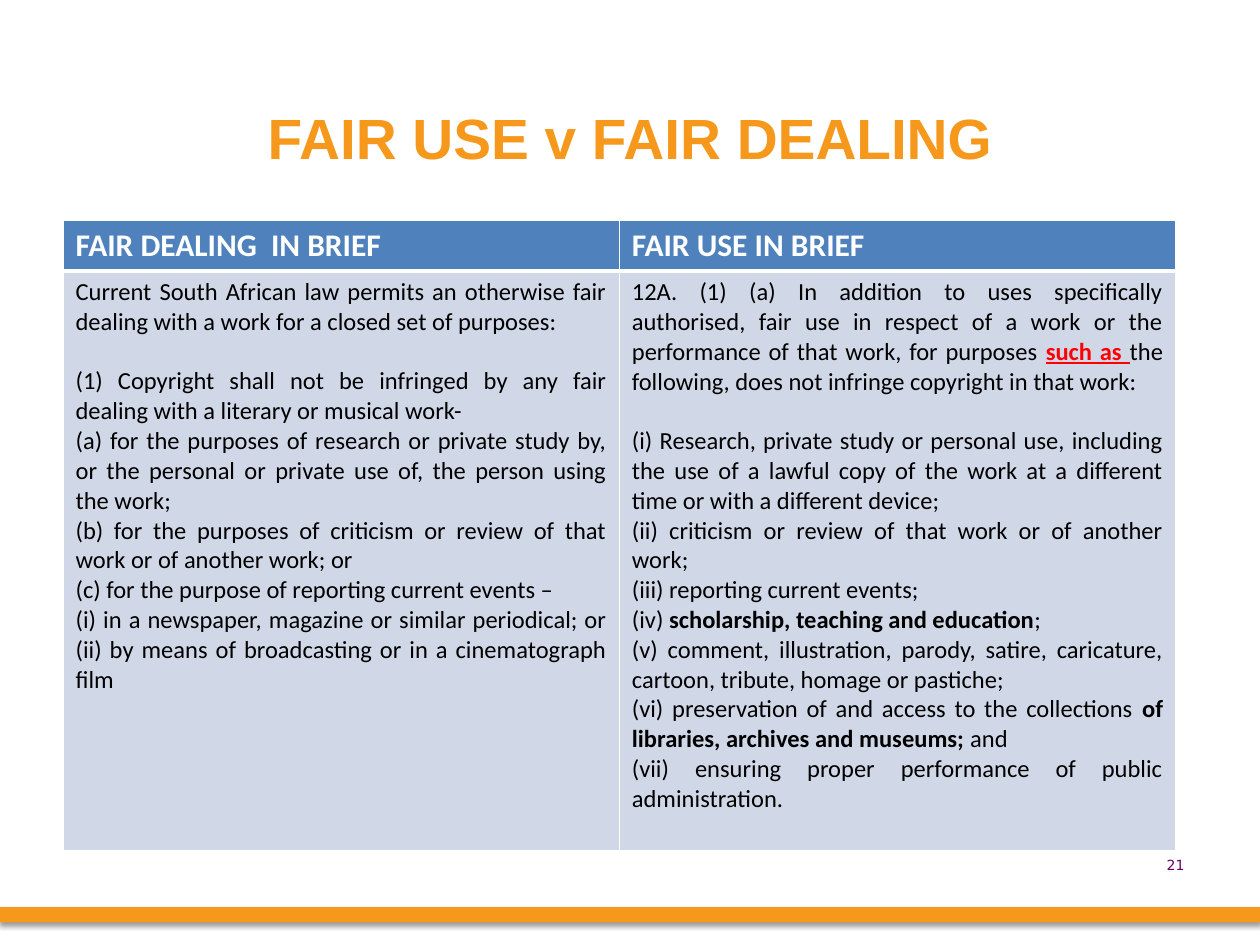
from lxml import etree
from pptx import Presentation, util as u
from pptx.dml.color import RGBColor
from pptx.enum import shapes, text
from pptx.oxml import ns

# Content: a paragraph is a list of (text, style) runs
TITLE = "FAIR USE v FAIR DEALING"
PAGE_NUMBER = "21"
HEADINGS = ["FAIR DEALING  IN BRIEF", "FAIR USE IN BRIEF"]
DEALING = [
    [("Current South African law permits an otherwise fair dealing with a work "
      "for a closed set of purposes:", "plain")],
    [("(1) Copyright shall not be infringed by any fair dealing with a literary "
      "or musical work-", "plain")],
    [("(a) for the purposes of research or private study by, or the personal or "
      "private use of, the person using the work;", "plain")],
    [("(b) for the purposes of criticism or review of that work or of another "
      "work; or", "plain")],
    [("(c) for the purpose of reporting current events –", "plain")],
    [("(i) in a newspaper, magazine or similar periodical; or (ii) by means of "
      "broadcasting or in a cinematograph film", "plain")],
]
USE = [
    [("12A. (1) (a) In addition to uses specifically authorised, fair use in "
      "respect of a work or the performance of that work, for purposes ", "plain"),
     ("such as", "stress"), (" ", "stress_gap"),
     ("the following, does not infringe copyright in that work:", "plain")],
    [("(i) Research, private study or personal use, including the use of a lawful "
      "copy of the work at a different time or with a different device;", "plain")],
    [("(ii) criticism or review of that work or of another work;", "plain")],
    [("(iii) reporting current events;", "plain")],
    [("(iv) ", "plain"), ("scholarship, teaching and education", "bold"),
     (";", "plain")],
    [("(v) comment, illustration, parody, satire, caricature, cartoon, tribute, "
      "homage or pastiche;", "plain")],
    [("(vi) preservation of and access to the collections ", "plain"),
     ("of libraries, archives and museums;", "bold"), (" and", "plain")],
    [("(vii) ensuring proper performance of public administration.", "plain")],
]
BODIES = [DEALING, USE]

THEME = {
    "orange": "F5981B", "header": "4F81BD", "body": "D0D8E8", "white": "FFFFFF",
    "black": "000000", "red": "FF0000", "purple": "660066",
    "title_size": 32.4, "heading_size": 18, "body_size": 14, "number_size": 8,
    "intro_gap": 17,
}
STYLES = {  # colour, bold, underline
    "plain": ("black", False, False),
    "bold": ("black", True, False),
    "stress": ("red", True, True),
    "stress_gap": ("red", False, True),
}

WIDTH, HEIGHT = 10, 7.5
MARGIN = WIDTH * 0.05
TABLE_TOP, TABLE_WIDTH = 1.75, 8.83
ROW_HEIGHTS = [0.4, 4.6]


def color(name):
    return RGBColor.from_string(THEME[name])


def style_run(span, face, size, ink, bold=False, underline=False):
    font = span.font
    font.name, font.size = face, u.Pt(size)
    font.bold, font.underline = bold, underline
    font.color.rgb = color(ink)


def add_label(page, place, content, align, **style):
    box = page.shapes.add_textbox(*map(u.Inches, place))
    box.text_frame.word_wrap = True
    para = box.text_frame.paragraphs[0]
    para.text, para.alignment = content, align
    style_run(para.runs[0], **style)


def set_borders(cell, widths):
    """Draw white cell borders; widths maps L, R, T, B to points."""
    props = cell._tc.get_or_add_tcPr()
    for index, (side, points) in enumerate(widths.items()):
        line = etree.Element(ns.qn(f"a:ln{side}"), w=str(u.Pt(points)))
        fill = etree.SubElement(line, ns.qn("a:solidFill"))
        etree.SubElement(fill, ns.qn("a:srgbClr"), val=THEME["white"])
        props.insert(index, line)


def add_shadow(shape):
    shape.shadow.inherit = False
    effects = shape._element.spPr.find(ns.qn("a:effectLst"))
    shadow = etree.SubElement(effects, ns.qn("a:outerShdw"), blurRad=str(u.Pt(3.1)),
                              dist=str(u.Pt(1.6)), dir="5400000", rotWithShape="0")
    tint = etree.SubElement(shadow, ns.qn("a:srgbClr"), val=THEME["black"])
    etree.SubElement(tint, ns.qn("a:alpha"), val="38000")


def fill_body(cell, content):
    frame = cell.text_frame
    for index, runs in enumerate(content):
        para = frame.add_paragraph() if index else frame.paragraphs[0]
        para.alignment = text.PP_ALIGN.JUSTIFY
        if index == 0:  # the introduction stands apart from the list
            para.space_after = u.Pt(THEME["intro_gap"])
        for words, style in runs:
            span = para.add_run()
            span.text = words
            style_run(span, "Calibri", THEME["body_size"], *STYLES[style])


def add_comparison(page):
    place = (MARGIN, TABLE_TOP, TABLE_WIDTH, sum(ROW_HEIGHTS))
    table = page.shapes.add_table(2, 2, *map(u.Inches, place)).table
    table.horz_banding = False
    for row, height in zip(table.rows, ROW_HEIGHTS):
        row.height = u.Inches(height)
    for column, (heading, body) in enumerate(zip(HEADINGS, BODIES)):
        table.columns[column].width = u.Inches(TABLE_WIDTH / 2)
        top, bottom = table.cell(0, column), table.cell(1, column)
        top.text_frame.text = heading
        style_run(top.text_frame.paragraphs[0].runs[0], "Calibri",
                  THEME["heading_size"], "white", bold=True)
        fill_body(bottom, body)
        for cell, fill, under in ((top, "header", 3), (bottom, "body", 1)):
            cell.fill.solid()
            cell.fill.fore_color.rgb = color(fill)
            set_borders(cell, {"L": 1, "R": 1, "T": 3 if cell is bottom else 1,
                               "B": under})


def main():
    deck = Presentation()
    deck.slide_width, deck.slide_height = u.Inches(WIDTH), u.Inches(HEIGHT)
    page = deck.slides.add_slide(deck.slide_layouts[6])

    # Footer bar
    bar = page.shapes.add_shape(shapes.MSO_SHAPE.RECTANGLE, 0, u.Inches(HEIGHT * 0.96),
                                u.Inches(WIDTH), u.Inches(0.12))
    bar.fill.solid()
    bar.fill.fore_color.rgb = color("orange")
    bar.line.fill.background()
    add_shadow(bar)

    # Title, comparison table and page number
    add_label(page, (MARGIN, 0.77, WIDTH - 2 * MARGIN, 0.78), TITLE,
              text.PP_ALIGN.CENTER, face="Arial", size=THEME["title_size"],
              ink="orange", bold=True)
    add_comparison(page)
    add_label(page, (8.94, 6.75, 0.56, 0.4), PAGE_NUMBER, text.PP_ALIGN.RIGHT,
              face="DejaVu Sans", size=THEME["number_size"], ink="purple")

    deck.save("out.pptx")


if __name__ == "__main__":
    main()
